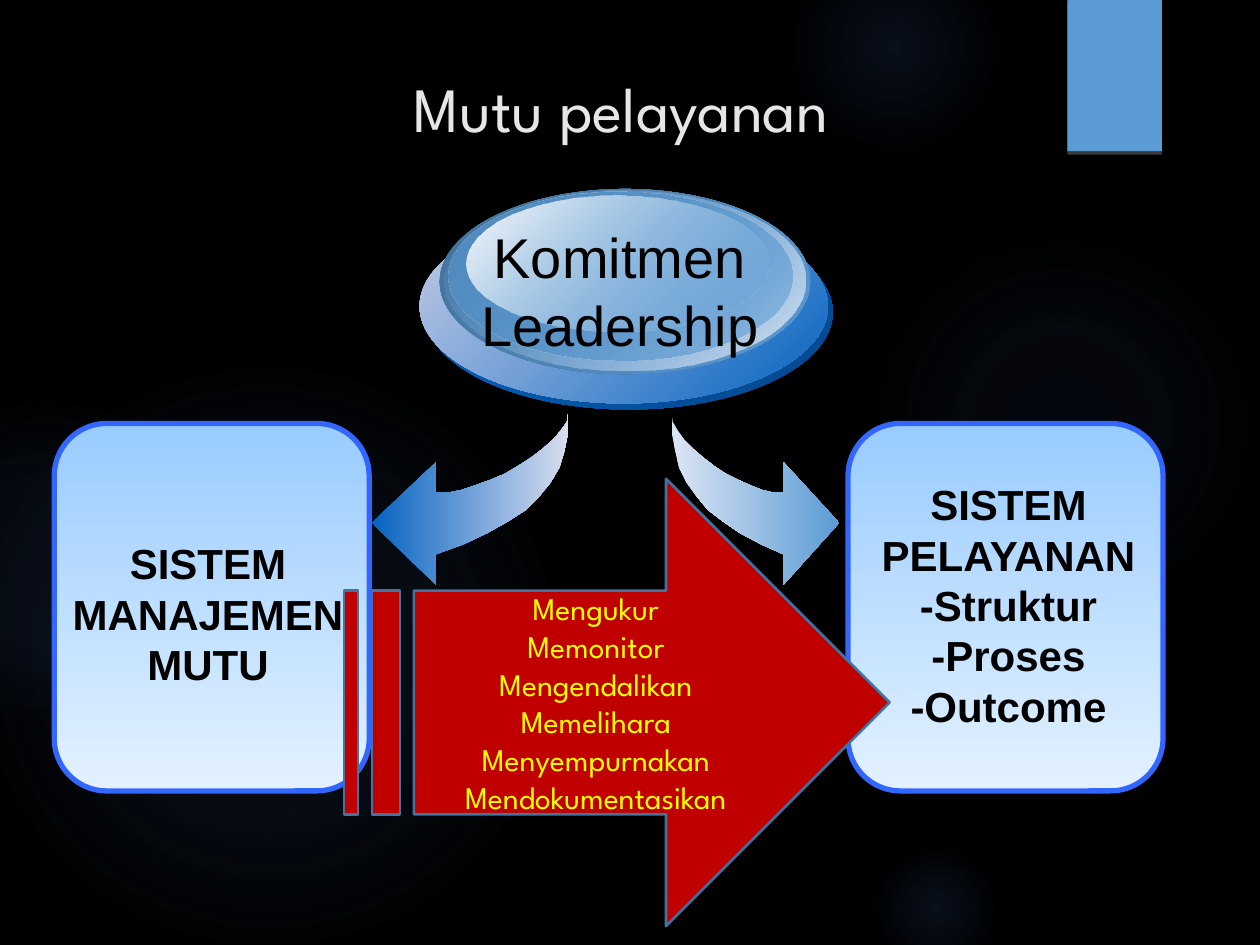
from lxml import etree
from pptx import Presentation
from pptx.dml.color import RGBColor
from pptx.enum.shapes import MSO_SHAPE as SHAPE
from pptx.enum.text import MSO_ANCHOR as ANCHOR, PP_ALIGN as ALIGN
from pptx.oxml import parse_xml
from pptx.oxml.ns import qn
from pptx.util import Pt

NS = 'xmlns:a="http://schemas.openxmlformats.org/drawingml/2006/main"'


def rgb(value):
    return RGBColor.from_string(value)


def fill_gradient(s, stops, angle=None):
    """Fill s without outline; stops are (position, colour, opacity), all in percent.

    Without an angle the gradient runs outwards from the centre.
    """
    s.shadow.inherit = False
    s.line.fill.background()
    s.fill.background()
    grad = etree.Element(qn("a:gradFill"), rotWithShape="1")
    stop_list = etree.SubElement(grad, qn("a:gsLst"))
    for pos, colour, opacity in stops:
        stop = etree.SubElement(stop_list, qn("a:gs"), pos=str(pos * 1000))
        clr = etree.SubElement(stop, qn("a:srgbClr"), val=colour)
        if opacity < 100:
            etree.SubElement(clr, qn("a:alpha"), val=str(opacity * 1000))
    if angle is None:
        circle = etree.SubElement(grad, qn("a:path"), path="circle")
        etree.SubElement(circle, qn("a:fillToRect"), l="50000", t="50000", r="50000", b="50000")
    else:
        etree.SubElement(grad, qn("a:lin"), ang=str(angle * 60000), scaled="0")
    spPr = s.element.spPr
    spPr.replace(spPr.find(qn("a:noFill")), grad)


prs = Presentation()
prs.slide_width, prs.slide_height = Pt(720), Pt(540)
slide = prs.slides.add_slide(prs.slide_layouts[5])
shapes = slide.shapes
slide.background.fill.solid()
slide.background.fill.fore_color.rgb = rgb("000000")

# Background glows: left, top, diameter, then the opacities and the end of the fade
glows = [
    (496, 132, 222, 7, 6, 69),
    (448, -36, 126, 14, 7, 73),
    (496, 480, 78, 14, 7, 66),
    (-12, 210, 330, 11, 10, 75),
    (-66, 228, 186, 8, 8, 72),
]
for left, top, size, inner, middle, end in glows:
    s = shapes.add_shape(SHAPE.OVAL, Pt(left), Pt(top), Pt(size), Pt(size))
    fill_gradient(s, [(0, "4472C4", inner), (36, "4472C4", middle), (end, "4472C4", 0)])

# Corner tab
tab = shapes.add_shape(SHAPE.RECTANGLE, Pt(610), 0, Pt(54), Pt(86.4))
tab.fill.solid()
tab.fill.fore_color.rgb = rgb("5B9BD5")
tab.line.fill.background()
tab.element.spPr.append(parse_xml(
    f'<a:effectLst {NS}><a:outerShdw blurRad="0" dist="25400" dir="5400000" rotWithShape="0">'
    '<a:srgbClr val="808080"><a:alpha val="45000"/></a:srgbClr></a:outerShdw></a:effectLst>'))

# Title
title = shapes.title
title.left, title.top, title.width, title.height = Pt(81.4), Pt(36), Pt(555.8), Pt(110.2)
tf = title.text_frame
tf.text = "Mutu pelayanan "
tf.vertical_anchor = ANCHOR.TOP
p = tf.paragraphs[0]
p.alignment = ALIGN.CENTER
font = p.runs[0].font
font.name, font.size, font.color.rgb = "League Spartan", Pt(36), rgb("E7E6E6")
shapes._spTree.append(title.element)

# System panels
for left in (484.6, 31):
    s = shapes.add_shape(SHAPE.ROUNDED_RECTANGLE, Pt(left), Pt(242), Pt(180), Pt(210))
    fill_gradient(s, [(0, "99CCFF", 100), (100, "E3F1FF", 100)], 90)
    s.line.color.rgb = rgb("3366FF")
    s.line.width = Pt(3)

# Curved arrows: the same outline, mirrored; distance from the tail and height, 1/100 inch
outline = [
    (0, 328), (0, 343), (3, 358), (7, 371), (14, 383), (23, 394), (34, 405), (48, 414),
    (64, 423), (83, 432), (105, 440), (105, 464), (156, 415), (105, 367), (105, 391),
    (95, 391), (85, 389), (73, 385), (62, 381), (50, 376), (40, 370), (29, 363),
    (20, 356), (12, 349), (6, 342), (1, 335),
]
curved_arrows = [
    (451, -1, "0563C1", "D8DDEE"),
    (533, 0.85, "DCE5F3", "5B9BD5"),
]
for tail, stretch, start, end in curved_arrows:
    points = [(tail + x * stretch, y) for x, y in outline]
    builder = shapes.build_freeform(*points[0], scale=Pt(0.72))
    builder.add_line_segments(points[1:], close=True)
    fill_gradient(builder.convert_to_shape(), [(0, start, 100), (100, end, 100)], 0)

# Leadership button: stacked ellipses
ellipses = [
    (242.6, 123, 233.3, 111, "0563C1", 100, "04488D", 100),
    (239.8, 119.5, 233.3, 111, "C6CDE6", 100, "0563C1", 100),
    (251.3, 108, 211.7, 105.8, "416F98", 100, "5B9BD5", 100),
    (254.2, 108.7, 206, 103, "5B9BD5", 0, "D8E3F1", 100),
    (256.3, 109.4, 196.6, 96.5, "528CC0", 100, "5B9BD5", 48),
    (266.4, 111.6, 172.8, 77.8, "FFFFFF", 100, "5B9BD5", 38),
]
for left, top, width, height, start, start_op, end, end_op in ellipses:
    s = shapes.add_shape(SHAPE.OVAL, Pt(left), Pt(top), Pt(width), Pt(height))
    fill_gradient(s, [(0, start, start_op), (100, end, end_op)], 45)

# Process arrow
arrow = shapes.add_shape(SHAPE.STRIPED_RIGHT_ARROW, Pt(196.6), Pt(273.6), Pt(311.8), Pt(255.6))
arrow.shadow.inherit = False
arrow.fill.solid()
arrow.fill.fore_color.rgb = rgb("C00000")
arrow.line.color.rgb = rgb("43739E")
arrow.line.width = Pt(1.5)
arrow.text_frame.vertical_anchor = ANCHOR.MIDDLE

# Labels
manage = shapes.add_textbox(Pt(31), Pt(303.8), Pt(175.7), Pt(94.3))
leader = shapes.add_textbox(Pt(267.1), Pt(123.8), Pt(174.2), Pt(85))
service = shapes.add_textbox(Pt(496), Pt(270), Pt(160.6), Pt(152.6))
steps = "Mengukur\nMemonitor\nMengendalikan\nMemelihara\nMenyempurnakan\nMendokumentasikan"
labels = [
    (manage, "SISTEM MANAJEMEN MUTU", "Arial", 24, True, "000000"),
    (leader, "Komitmen\nLeadership", "Arial", 32, False, "000000"),
    (service, "SISTEM PELAYANAN\n-Struktur\n-Proses\n-Outcome", "Arial", 24, True, "000000"),
    (arrow, steps, "League Spartan", 18, False, "FFFF00"),
]
for s, text, name, size, bold, colour in labels:
    tf = s.text_frame
    tf.text = text
    tf.word_wrap = s is not leader
    for p in tf.paragraphs:
        p.alignment = ALIGN.CENTER
        font = p.runs[0].font
        font.name, font.size, font.bold = name, Pt(size), bold
        font.color.rgb = rgb(colour)

# The process arrow lies over the panel labels
shapes._spTree.append(arrow.element)

prs.save("out.pptx")
